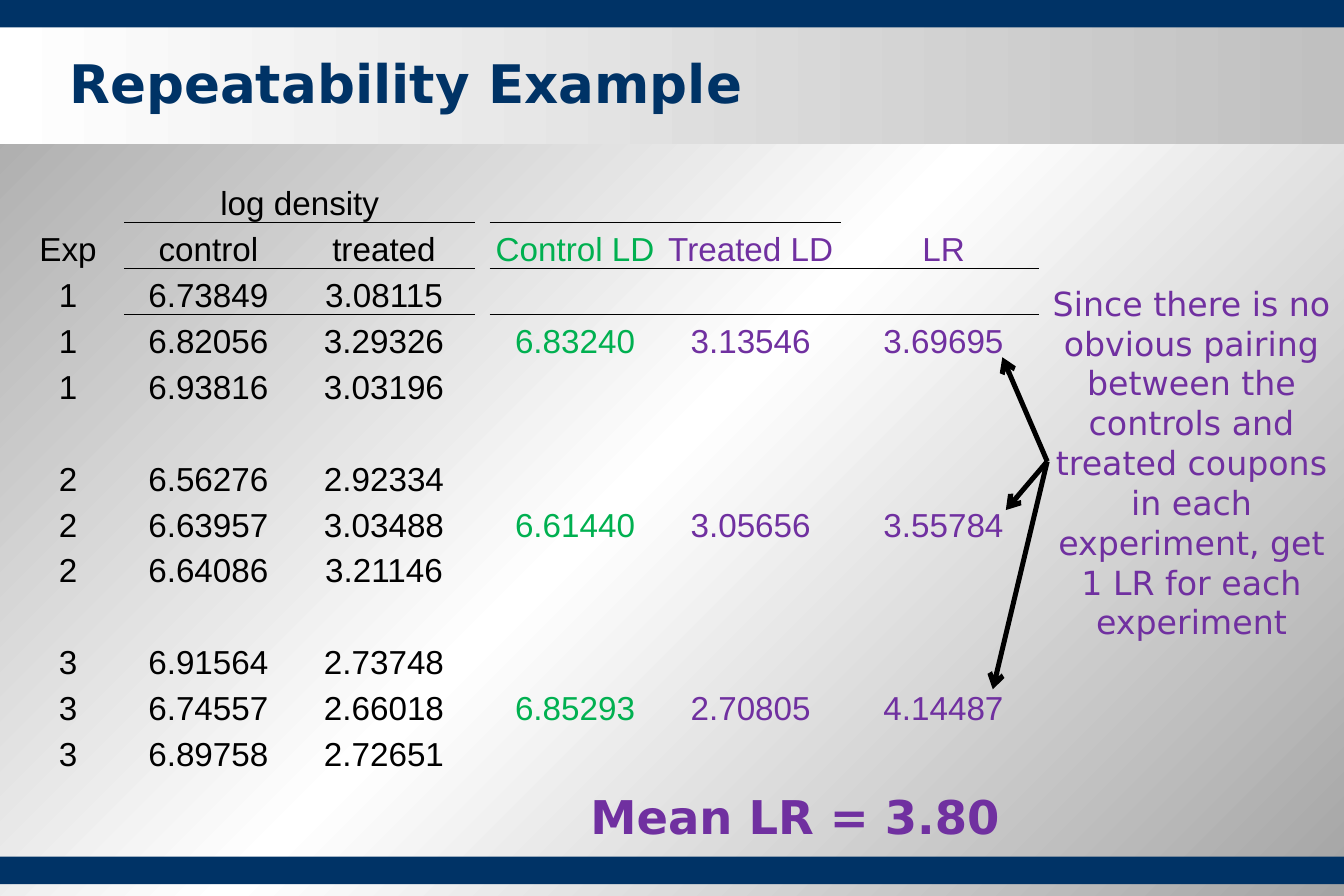
from copy import deepcopy

from lxml.etree import SubElement
from pptx import Presentation
from pptx.dml.color import RGBColor
from pptx.enum.shapes import MSO_CONNECTOR as Connector, MSO_SHAPE as Shape
from pptx.enum.text import MSO_ANCHOR as Anchor, MSO_AUTO_SIZE as AutoSize, PP_ALIGN as Align
from pptx.oxml import parse_xml
from pptx.oxml.ns import nsdecls, qn
from pptx.util import Inches, Pt

WIDTH, HEIGHT = 11.25, 7.5
NAVY, BLACK, GREEN, PURPLE = "003366", "000000", "00B050", "7030A0"
TEXT_FONT, TABLE_FONT = "DejaVu Sans", "Arial"
NO_TABLE_STYLE = "{2D5ABB26-0587-4C30-8999-92F81FD0307C}"

TITLE = [("Repeatability Example", 32, NAVY, True)]
MEAN = [(" ", 36, BLACK, True), ("Mean LR = 3.80", 28, PURPLE, True)]
NOTE = [("Since there is no obvious pairing between the controls and treated coupons "
         "in each experiment, get 1 LR for each experiment", 20, PURPLE, False)]

HEADINGS = {0: "Exp", 1: "control", 2: "treated", 4: "Control LD", 5: "Treated LD", 7: "LR"}
EXPERIMENTS = [
    ("1", [("6.73849", "3.08115"), ("6.82056", "3.29326"), ("6.93816", "3.03196")],
     ("6.83240", "3.13546", "3.69695")),
    ("2", [("6.56276", "2.92334"), ("6.63957", "3.03488"), ("6.64086", "3.21146")],
     ("6.61440", "3.05656", "3.55784")),
    ("3", [("6.91564", "2.73748"), ("6.74557", "2.66018"), ("6.89758", "2.72651")],
     ("6.85293", "2.70805", "4.14487")),
]
COLUMN_WIDTHS = [0.94, 1.41, 1.53, 0.12, 1.43, 1.51, 0.05, 1.6, 0.12]
COLUMN_COLOURS = {4: GREEN, 5: PURPLE, 7: PURPLE}
MEAN_COLUMNS = (4, 5, 7)
ROW_COUNT = 13
RULED_COLUMNS = {0: (1, 2, 4, 5), 1: (1, 2, 4, 5, 6, 7)}

ARROW_START = (77.92, 51.5)
ARROW_ENDS = [(74.58, 39.87), (74.84, 56.93), (73.87, 76.93)]


def colour(value):
    """Turn a hex string into a colour."""
    return RGBColor.from_string(value)


def place(*shares):
    """Turn alternating shares of width and height, in percent, into lengths."""
    return [Inches(share / 100 * (HEIGHT if index % 2 else WIDTH))
            for index, share in enumerate(shares)]


def set_gradient(fill, owner, colours, angle):
    """Spread the colours evenly over a gradient fill."""
    fill.gradient()
    fill.gradient_angle = angle
    stop_list = owner.xpath(".//a:gsLst")[0]
    while len(stop_list) < len(colours):
        stop_list.append(deepcopy(stop_list[0]))
    for index, (stop, value) in enumerate(zip(fill.gradient_stops, colours)):
        stop.position = index / (len(colours) - 1)
        stop.color.rgb = colour(value)


def add_band(slide, top, height):
    """Add a navy band across the slide."""
    band = slide.shapes.add_shape(Shape.RECTANGLE, *place(0, top, 100, height))
    band.shadow.inherit = False
    band.fill.solid()
    band.fill.fore_color.rgb = colour(NAVY)
    band.line.fill.background()
    return band


def add_run(paragraph, text, size, value, bold=False, font=TEXT_FONT):
    """Add one formatted run."""
    run = paragraph.add_run()
    run.text = text
    run.font.name, run.font.size, run.font.bold = font, Pt(size), bold
    run.font.color.rgb = colour(value)


def add_text(slide, shares, runs, align=Align.LEFT, wrap=True):
    """Add a text box with one paragraph."""
    frame = slide.shapes.add_textbox(*place(*shares)).text_frame
    frame.word_wrap = wrap
    frame.auto_size = AutoSize.SHAPE_TO_FIT_TEXT
    paragraph = frame.paragraphs[0]
    paragraph.alignment = align
    for run in runs:
        add_run(paragraph, *run)


def add_rule(cell, edge):
    """Draw a thin line along one edge of a cell."""
    cell._tc.get_or_add_tcPr().append(parse_xml(
        f'<a:{edge} {nsdecls("a")} w="{Pt(0.5)}"><a:solidFill><a:srgbClr val="{BLACK}"/>'
        f'</a:solidFill></a:{edge}>'))


def table_texts():
    """Map each filled row and column to its text."""
    texts = {(0, 1): "log density"}
    texts.update({(1, column): text for column, text in HEADINGS.items()})
    for index, (number, coupons, means) in enumerate(EXPERIMENTS):
        first = 2 + index * (len(coupons) + 1)
        for row, values in enumerate(coupons, first):
            texts.update({(row, column): text for column, text in enumerate((number, *values))})
        texts.update({(first + 1, column): text for column, text in zip(MEAN_COLUMNS, means)})
    return texts


def add_density_table(slide):
    """Add the table of log densities and log reductions."""
    frame = slide.shapes.add_table(ROW_COUNT, len(COLUMN_WIDTHS), *place(0.89, 19.73, 77.51, 66.67))
    table = frame.table
    table.first_row = table.horz_banding = False
    frame.element.xpath(".//a:tableStyleId")[0].text = NO_TABLE_STYLE
    for column, width in zip(table.columns, COLUMN_WIDTHS):
        column.width = Inches(width)
    texts = table_texts()
    for row in range(ROW_COUNT):
        for column in range(len(COLUMN_WIDTHS)):
            cell = table.cell(row, column)
            for edge, ruled_row in (("lnT", row - 1), ("lnB", row)):
                if column in RULED_COLUMNS.get(ruled_row, ()):
                    add_rule(cell, edge)
            cell.fill.background()
            cell.vertical_anchor = Anchor.BOTTOM
            cell.margin_left = cell.margin_right = cell.margin_top = Inches(0.01)
            cell.margin_bottom = 0
            if (row, column) in texts:
                paragraph = cell.text_frame.paragraphs[0]
                paragraph.alignment = Align.CENTER
                add_run(paragraph, texts[row, column], 20,
                        COLUMN_COLOURS.get(column, BLACK), font=TABLE_FONT)
    for column in (1, 4):
        table.cell(0, column).merge(table.cell(0, column + 1))


def add_arrow(slide, end):
    """Add an arrow from the note to a log reduction."""
    arrow = slide.shapes.add_connector(Connector.STRAIGHT, *place(*ARROW_START, *end))
    arrow.line.color.rgb = colour(BLACK)
    arrow.line.width = Pt(3)
    SubElement(arrow.line._get_or_add_ln(), qn("a:tailEnd"), type="arrow")
    SubElement(arrow.element.spPr, qn("a:effectLst"))


def main():
    """Build the slide and save it."""
    presentation = Presentation()
    presentation.slide_width, presentation.slide_height = Inches(WIDTH), Inches(HEIGHT)
    slide = presentation.slides.add_slide(presentation.slide_layouts[6])
    set_gradient(slide.background.fill, slide.element, ["A4A4A4", "FFFFFF", "A4A4A4"], 315)
    add_band(slide, 95.6, 3.07)
    title_band = add_band(slide, 2.8, 13.33)
    set_gradient(title_band.fill, title_band.element, ["FFFFFF", "C0C0C0"], 0)
    add_text(slide, (4.27, 4.93, 92, 8.53), TITLE)
    add_band(slide, 0, 3.07)
    add_density_table(slide)
    add_text(slide, (41.51, 85.87, 34.04, 9.47), MEAN, wrap=False)
    add_text(slide, (77.24, 30.93, 22.84, 41.73), NOTE, Align.CENTER)
    for end in ARROW_ENDS:
        add_arrow(slide, end)
    presentation.save("out.pptx")


if __name__ == "__main__":
    main()
